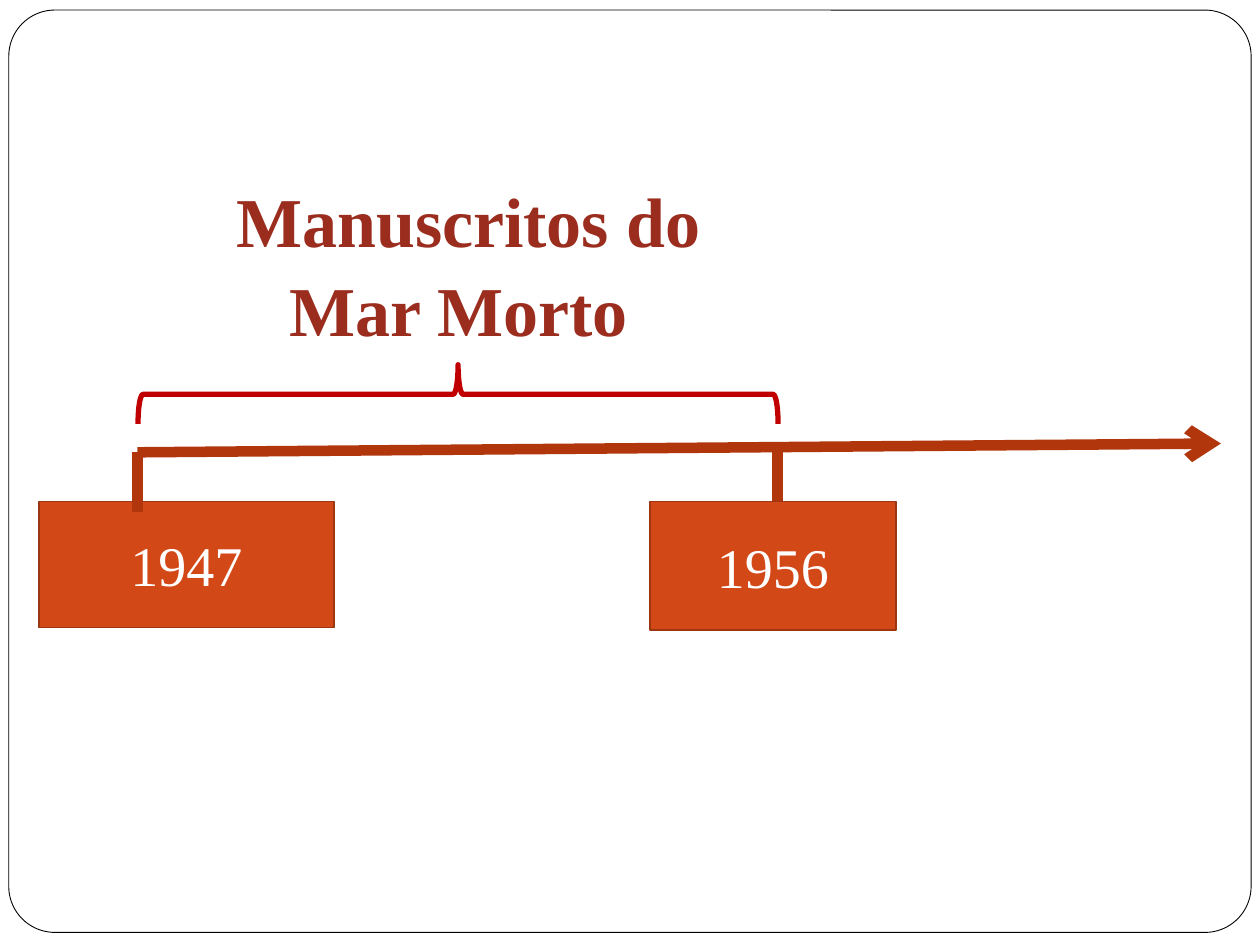
from dataclasses import dataclass

from lxml.etree import SubElement
from pptx import Presentation
from pptx.dml.color import RGBColor
from pptx.enum.shapes import MSO_CONNECTOR, MSO_SHAPE
from pptx.enum.text import MSO_ANCHOR, PP_ALIGN
from pptx.oxml.ns import qn
from pptx.util import Inches, Pt


@dataclass(frozen=True)
class Theme:
    """Colours, fonts and sizes of the slide."""
    white: str = "FFFFFF"
    frame: str = "000000"
    axis: str = "B1360B"
    year_fill: str = "D34817"
    year_line: str = "9C3511"
    brace: str = "C00000"
    title: str = "9B2D1F"
    title_space: str = "696464"
    serif: str = "Times New Roman"
    sans: str = "Arial"
    title_size: float = 40
    year_size: float = 32
    axis_width: float = 6


THEME = Theme()


def add_span(para, text, color, **font_values):
    """Append a run with the given colour and font values."""
    span = para.add_run()
    span.text = text
    for name, value in font_values.items():
        setattr(span.font, name, value)
    span.font.color.rgb = RGBColor.from_string(color)


def add_outlined(page, kind, place, fill, line, width):
    """Add a filled preset shape with an outline and no shadow."""
    shape = page.shapes.add_shape(kind, *map(Inches, place))
    shape.shadow.inherit = False
    shape.fill.solid()
    shape.fill.fore_color.rgb = RGBColor.from_string(fill)
    shape.line.color.rgb = RGBColor.from_string(line)
    shape.line.width = Pt(width)
    return shape


def add_year(page, year, place):
    """Add a box that names a year."""
    box = add_outlined(page, MSO_SHAPE.RECTANGLE, place,
                       THEME.year_fill, THEME.year_line, 1)
    box.text_frame.vertical_anchor = MSO_ANCHOR.MIDDLE
    para = box.text_frame.paragraphs[0]
    para.alignment = PP_ALIGN.CENTER
    add_span(para, year, THEME.white, name=THEME.serif, size=Pt(THEME.year_size))


def add_axis_line(page, start, end, arrow=False):
    """Add a thick straight line, with an arrowhead at its end if asked."""
    line = page.shapes.add_connector(MSO_CONNECTOR.STRAIGHT, *map(Inches, start + end))
    line.line.color.rgb = RGBColor.from_string(THEME.axis)
    line.line.width = Pt(THEME.axis_width)
    if arrow:
        SubElement(line.line._get_or_add_ln(), qn("a:tailEnd"), type="arrow")
    SubElement(line._element.spPr, qn("a:effectLst"))


def add_title(page, place):
    """Add the two-line title above the brace."""
    frame = page.shapes.add_textbox(*map(Inches, place)).text_frame
    frame.word_wrap = True
    values = {"size": Pt(THEME.title_size), "bold": True}
    first, second = frame.paragraphs[0], frame.add_paragraph()
    for para in (first, second):
        para.alignment = PP_ALIGN.CENTER
        para.line_spacing = 1.05
    add_span(first, " ", THEME.title_space, name=THEME.sans, **values)
    add_span(first, "Manuscritos do ", THEME.title, name=THEME.serif, **values)
    add_span(second, "Mar Morto ", THEME.title, name=THEME.serif, **values)


def main():
    """Build the timeline slide and save it."""
    deck = Presentation()
    deck.slide_width, deck.slide_height = Inches(10), Inches(7.5)
    page = deck.slides.add_slide(deck.slide_layouts[6])
    frame = add_outlined(page, MSO_SHAPE.ROUNDED_RECTANGLE, (0.07, 0.08, 9.86, 7.32),
                         THEME.white, THEME.frame, 0.5)
    frame.adjustments[0] = 0.05
    add_axis_line(page, (1.09, 3.59), (9.69, 3.52), arrow=True)
    add_year(page, "1947", (0.31, 3.98, 2.34, 1))
    add_axis_line(page, (1.09, 3.59), (1.09, 4.06))
    add_axis_line(page, (6.17, 3.52), (6.17, 3.98))
    brace = add_outlined(page, MSO_SHAPE.LEFT_BRACE, (3.4, 0.59, 0.47, 5.08),
                         THEME.white, THEME.brace, 3)
    brace.rotation = 90
    add_title(page, (0.31, 1.33, 6.8, 1.45))
    add_year(page, "1956", (5.16, 3.98, 1.95, 1.02))
    deck.save("out.pptx")


if __name__ == "__main__":
    main()
